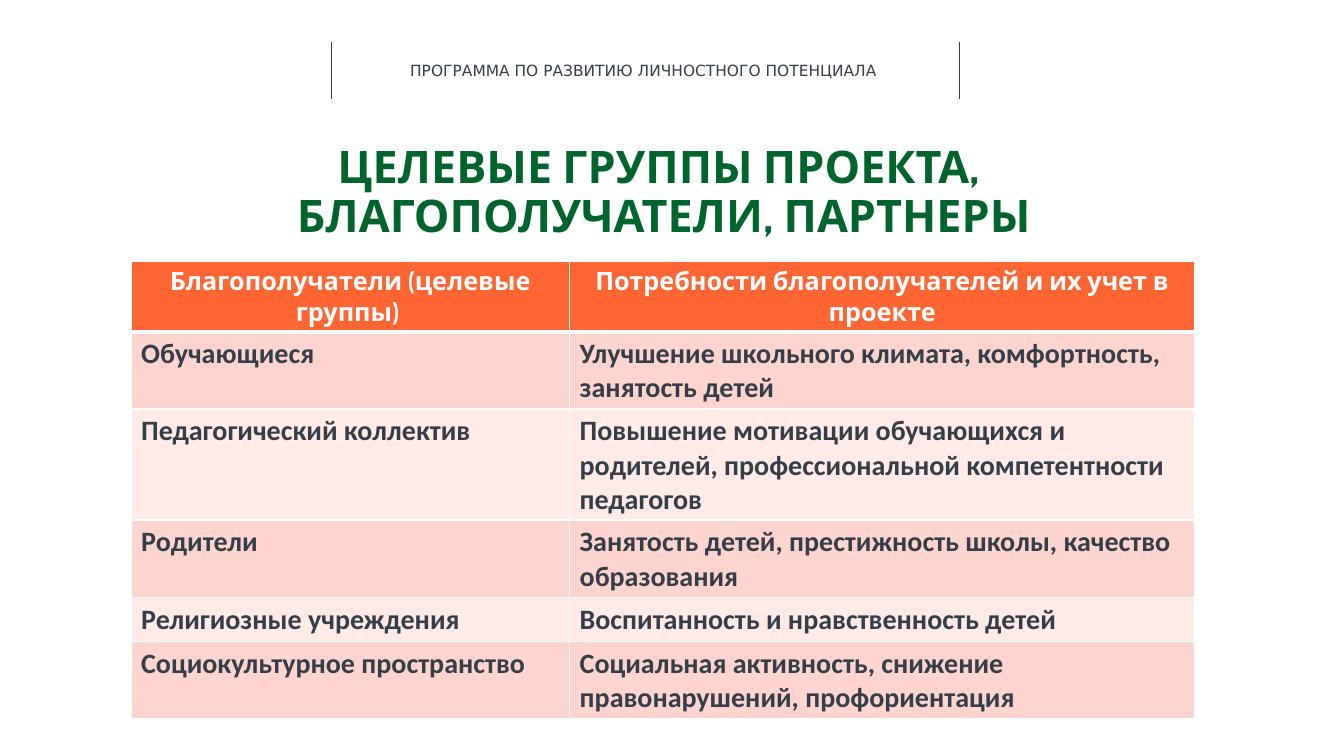
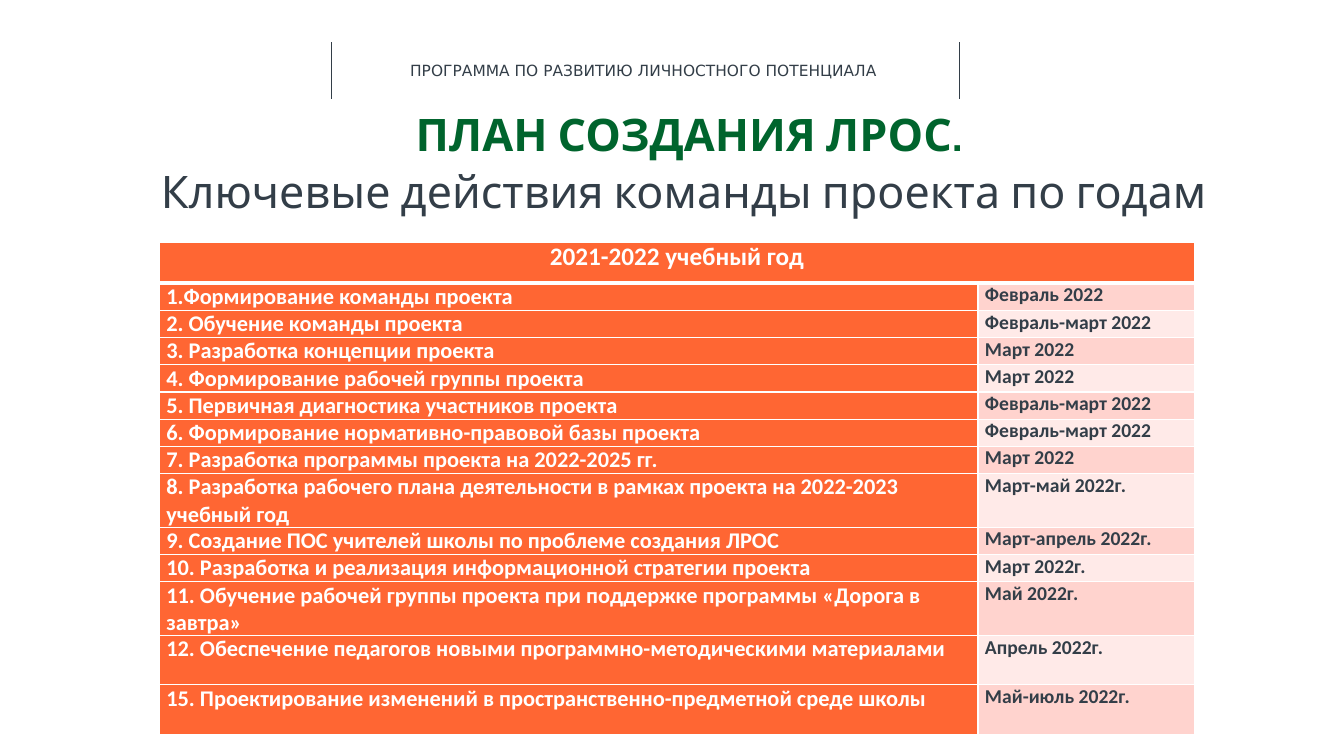
from dataclasses import dataclass

import pptx
import pptx.dml.color
import pptx.enum.shapes
import pptx.enum.text
import pptx.oxml
import pptx.oxml.ns
import pptx.util
from lxml import etree

Inches = pptx.util.Inches
Pt = pptx.util.Pt
qn = pptx.oxml.ns.qn
CENTER = pptx.enum.text.PP_ALIGN.CENTER

COLORS = {
    "white": "FFFFFF",
    "ink": "333E48",
    "green": "00642D",
    "orange": "FF6633",
    "band_dark": "FFD3CE",
    "band_light": "FFEAE8",
}
TITLE_FONT, BODY_FONT, LABEL_FONT = "Cabin", "Calibri", "DejaVu Sans"
PROGRAM = "ПРОГРАММА ПО РАЗВИТИЮ ЛИЧНОСТНОГО ПОТЕНЦИАЛА"


@dataclass(frozen=True)
class Style:
    size: float
    color: str
    font: str = BODY_FONT
    bold: bool = True


@dataclass(frozen=True)
class TableSpec:
    left: float
    top: float
    col_widths: tuple[float, ...]
    row_heights: tuple[float, ...]
    header: tuple[str, ...]
    rows: tuple[tuple[str, str], ...]
    header_style: Style
    col_styles: tuple[Style, Style]
    filled_first_col: bool = False
    tight: bool = False


TITLE = Style(32, "green", TITLE_FONT)
SUBTITLE = Style(32, "ink", TITLE_FONT, False)
LABEL = Style(11, "ink", LABEL_FONT, False)

GROUPS = TableSpec(
    left=1.3, top=2.59, col_widths=(4.35, 6.2),
    row_heights=(0.69, 0.76, 1.1, 0.76, 0.44, 0.76),
    header=("Благополучатели (целевые группы) ",
            "Потребности благополучателей и их учет в проекте"),
    rows=(
        ("Обучающиеся",
         "Улучшение школьного климата, комфортность, занятость детей"),
        ("Педагогический коллектив",
         "Повышение мотивации обучающихся и родителей, "
         "профессиональной компетентности педагогов"),
        ("Родители",
         "Занятость детей, престижность школы, качество образования"),
        ("Религиозные учреждения", "Воспитанность и нравственность детей"),
        ("Социокультурное пространство",
         "Социальная активность, снижение правонарушений, профориентация"),
    ),
    header_style=Style(18, "white", TITLE_FONT),
    col_styles=(Style(20, "ink"), Style(20, "ink")),
)

PLAN = TableSpec(
    left=1.58, top=2.4, col_widths=(8.12, 2.15),
    row_heights=(0.41, *[0.27] * 7, 0.53, 0.27, 0.27, 0.53, 0.49, 0.49),
    header=("2021-2022 учебный год",),
    rows=(
        ("1.Формирование команды проекта", "Февраль 2022"),
        ("2. Обучение команды проекта", "Февраль-март 2022"),
        ("3. Разработка концепции проекта", "Март 2022"),
        ("4. Формирование рабочей группы проекта", "Март 2022"),
        ("5. Первичная диагностика участников проекта", "Февраль-март 2022"),
        ("6. Формирование нормативно-правовой базы проекта",
         "Февраль-март 2022"),
        ("7. Разработка программы проекта на 2022-2025 гг.", "Март 2022"),
        ("8. Разработка рабочего плана деятельности в рамках проекта "
         "на 2022-2023 учебный год", "Март-май 2022г."),
        ("9. Создание ПОС учителей школы по проблеме создания ЛРОС",
         "Март-апрель 2022г."),
        ("10. Разработка и реализация информационной стратегии проекта",
         "Март 2022г."),
        ("11. Обучение рабочей группы проекта при поддержке программы "
         "«Дорога в завтра»", "Май 2022г."),
        ("12. Обеспечение педагогов новыми программно-методическими "
         "материалами", "Апрель 2022г."),
        ("15. Проектирование изменений в пространственно-предметной среде "
         "школы", "Май-июль 2022г."),
    ),
    header_style=Style(18, "white"),
    col_styles=(Style(16, "white"), Style(14, "ink")),
    filled_first_col=True, tight=True,
)


def rgb(name: str) -> pptx.dml.color.RGBColor:
    return pptx.dml.color.RGBColor.from_string(COLORS[name])


def add_run(p, text: str, style: Style) -> None:
    r = p.add_run()
    r.text = text
    r.font.name = style.font
    r.font.size = Pt(style.size)
    r.font.bold = style.bold
    r.font.color.rgb = rgb(style.color)


def add_banner(s) -> None:
    """Draw the program name between two upright rules."""
    for x in (3.29, 9.52):
        rule = s.shapes.add_connector(
            pptx.enum.shapes.MSO_CONNECTOR.STRAIGHT,
            Inches(x), Inches(0.42), Inches(x), Inches(0.98))
        rule.line.color.rgb = rgb("ink")
        rule.line.width = Pt(0.5)
        etree.SubElement(rule._element.spPr, qn("a:effectLst"))
    box = s.shapes.add_textbox(
        Inches(3.97), Inches(0.56), Inches(4.87), Inches(0.29))
    box.text_frame.word_wrap = True
    add_run(box.text_frame.paragraphs[0], PROGRAM, LABEL)


def add_title(s, left: float, top: float, height: float,
              lines: tuple[tuple[str, Style], ...], gap: float = 0) -> None:
    box = s.shapes.add_textbox(
        Inches(left), Inches(top), Inches(13.31), Inches(height))
    tf = box.text_frame
    tf.word_wrap = True
    tf.margin_left = tf.margin_top = tf.margin_right = tf.margin_bottom = 0
    for i, (text, style) in enumerate(lines):
        p = tf.add_paragraph() if i else tf.paragraphs[0]
        p.alignment = CENTER
        p.line_spacing = 0.9
        if i:
            p.space_before = Pt(gap)
        add_run(p, text, style)


def set_borders(cell, top: float, bottom: float) -> None:
    tc_pr = cell._tc.get_or_add_tcPr()
    for side, width in (("L", 1), ("R", 1), ("T", top), ("B", bottom)):
        ln = etree.SubElement(tc_pr, qn(f"a:ln{side}"), w=str(Pt(width)))
        fill = etree.SubElement(ln, qn("a:solidFill"))
        etree.SubElement(fill, qn("a:srgbClr"), val=COLORS["white"])


def fill_cell(cell, text: str, style: Style, fill: str, row: int,
              tight: bool) -> None:
    set_borders(cell, top=3 if row == 1 else 1, bottom=3 if row == 0 else 1)
    cell.fill.solid()
    cell.fill.fore_color.rgb = rgb(fill)
    if tight:
        cell.margin_left = cell.margin_right = Inches(0.07)
        cell.margin_top = cell.margin_bottom = 0
    p = cell.text_frame.paragraphs[0]
    if row == 0:
        p.alignment = CENTER
    if text:
        add_run(p, text, style)


def add_table(s, spec: TableSpec) -> None:
    table = s.shapes.add_table(
        len(spec.rows) + 1, len(spec.col_widths),
        Inches(spec.left), Inches(spec.top),
        Inches(sum(spec.col_widths)), Inches(sum(spec.row_heights))).table
    for column, width in zip(table.columns, spec.col_widths):
        column.width = Inches(width)
    for row, height in zip(table.rows, spec.row_heights):
        row.height = Inches(height)
    if len(spec.header) == 1:
        table.cell(0, 0).merge(table.cell(0, len(spec.col_widths) - 1))
    for col, text in enumerate(spec.header):
        fill_cell(table.cell(0, col), text, spec.header_style, "orange", 0,
                  spec.tight)
    for row, texts in enumerate(spec.rows, 1):
        band = "band_dark" if row % 2 else "band_light"
        for col, text in enumerate(texts):
            fill = "orange" if spec.filled_first_col and col == 0 else band
            fill_cell(table.cell(row, col), text, spec.col_styles[col], fill,
                      row, spec.tight)


def main() -> None:
    prs = pptx.Presentation()
    prs.slide_width, prs.slide_height = Inches(13.33), Inches(7.5)
    blank = prs.slide_layouts[6]

    s = prs.slides.add_slide(blank)
    add_banner(s)
    add_title(s, -0.07, 1.44, 0.97, (
        ("ЦЕЛЕВЫЕ ГРУППЫ ПРОЕКТА, ", TITLE),
        ("БЛАГОПОЛУЧАТЕЛИ, ПАРТНЕРЫ", TITLE)))
    add_table(s, GROUPS)

    s = prs.slides.add_slide(blank)
    add_banner(s)
    add_title(s, 0.18, 1.12, 1.05, (
        ("ПЛАН СОЗДАНИЯ ЛРОС.", TITLE),
        ("Ключевые действия команды проекта по годам ", SUBTITLE)), gap=6)
    add_table(s, PLAN)

    prs.save("out.pptx")


if __name__ == "__main__":
    main()
